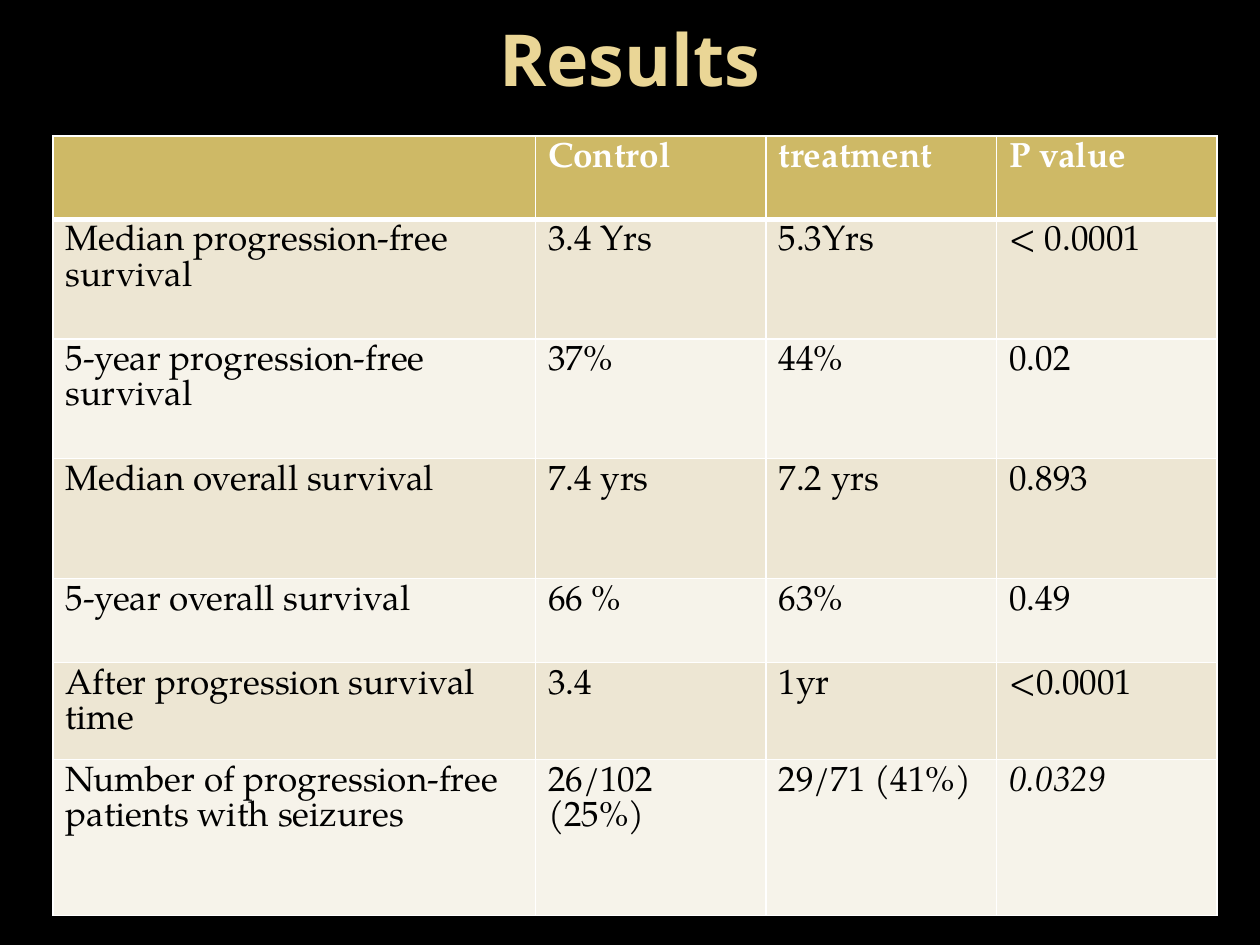
from dataclasses import dataclass

from lxml import etree
from pptx import Presentation
from pptx.dml.color import RGBColor
from pptx.enum.text import MSO_ANCHOR, PP_ALIGN
from pptx.oxml.ns import qn
from pptx.util import Inches, Pt

CENTER = PP_ALIGN.CENTER
MIDDLE = MSO_ANCHOR.MIDDLE


@dataclass(frozen=True)
class Theme:
    background: str = "000000"
    title: str = "EAD696"
    header: str = "CEB966"
    header_text: str = "FFFFFF"
    body_text: str = "000000"
    bands: tuple = ("EDE6D3", "F6F3EA")
    border: str = "FFFFFF"
    title_font: str = "Noto Sans"
    table_font: str = "TeX Gyre Pagella"
    title_size: int = 41
    table_size: int = 20


THEME = Theme()

COLUMNS = [3.83, 1.83, 1.83, 1.75]
ROW_HEIGHTS = [0.66, 0.95, 0.95, 0.95, 0.67, 0.67, 1.24]
RESULTS = [
    ["", "Control", "treatment", "P value"],
    ["Median progression-free survival", "3.4 Yrs", "5.3Yrs", "< 0.0001"],
    ["5-year progression-free survival", "37%", "44%", "0.02"],
    ["Median overall survival", "7.4 yrs", "7.2 yrs", "0.893"],
    ["5-year overall survival", "66 %", "63%", "0.49"],
    ["After progression survival time", "3.4", "1yr", "<0.0001"],
    ["Number of progression-free patients with seizures",
     "26/102 (25%)", "29/71 (41%)", "0.0329"],
]
ITALIC_VALUE = "0.0329"


def style_runs(p, font, size, color, bold=False, italic=False):
    for r in p.runs:
        r.font.name = font
        r.font.size = Pt(size)
        r.font.bold = bold
        r.font.italic = italic
        r.font.color.rgb = RGBColor.from_string(color)


def add_title(s, text):
    sp = s.shapes.add_textbox(Inches(0.5), Inches(-0.17), Inches(9), Inches(1.25))
    tf = sp.text_frame
    tf.word_wrap = True
    tf.vertical_anchor = MIDDLE
    tf.text = text
    p = tf.paragraphs[0]
    p.alignment = CENTER
    style_runs(p, THEME.title_font, THEME.title_size, THEME.title, bold=True)


def set_borders(cell, widths):
    """Draw the cell edges; borders must precede the fill in tcPr."""
    tc_pr = cell._tc.get_or_add_tcPr()
    for i, (edge, width) in enumerate(widths.items()):
        ln = etree.Element(qn(f"a:{edge}"), w=str(Pt(width)))
        fill = etree.SubElement(ln, qn("a:solidFill"))
        etree.SubElement(fill, qn("a:srgbClr"), val=THEME.border)
        tc_pr.insert(i, ln)


def fill_cell(cell, text, row):
    is_header = row == 0
    color = THEME.header if is_header else THEME.bands[(row - 1) % 2]
    cell.fill.solid()
    cell.fill.fore_color.rgb = RGBColor.from_string(color)
    set_borders(cell, {"lnL": 1, "lnR": 1,
                       "lnT": 3 if row == 1 else 1,
                       "lnB": 3 if is_header else 1})
    cell.text = text
    style_runs(cell.text_frame.paragraphs[0], THEME.table_font, THEME.table_size,
               THEME.header_text if is_header else THEME.body_text,
               bold=is_header, italic=text == ITALIC_VALUE)


def add_results_table(s):
    table = s.shapes.add_table(
        len(RESULTS), len(COLUMNS), Inches(0.42), Inches(1.08),
        Inches(sum(COLUMNS)), Inches(sum(ROW_HEIGHTS))).table
    for column, width in zip(table.columns, COLUMNS):
        column.width = Inches(width)
    for i, (height, values) in enumerate(zip(ROW_HEIGHTS, RESULTS)):
        table.rows[i].height = Inches(height)
        for j, text in enumerate(values):
            fill_cell(table.cell(i, j), text, i)


def main():
    prs = Presentation()
    prs.slide_width, prs.slide_height = Inches(10), Inches(7.5)
    s = prs.slides.add_slide(prs.slide_layouts[6])

    # Black background
    s.background.fill.solid()
    s.background.fill.fore_color.rgb = RGBColor.from_string(THEME.background)

    # Heading and outcome comparison
    add_title(s, "Results")
    add_results_table(s)
    prs.save("out.pptx")


if __name__ == "__main__":
    main()
